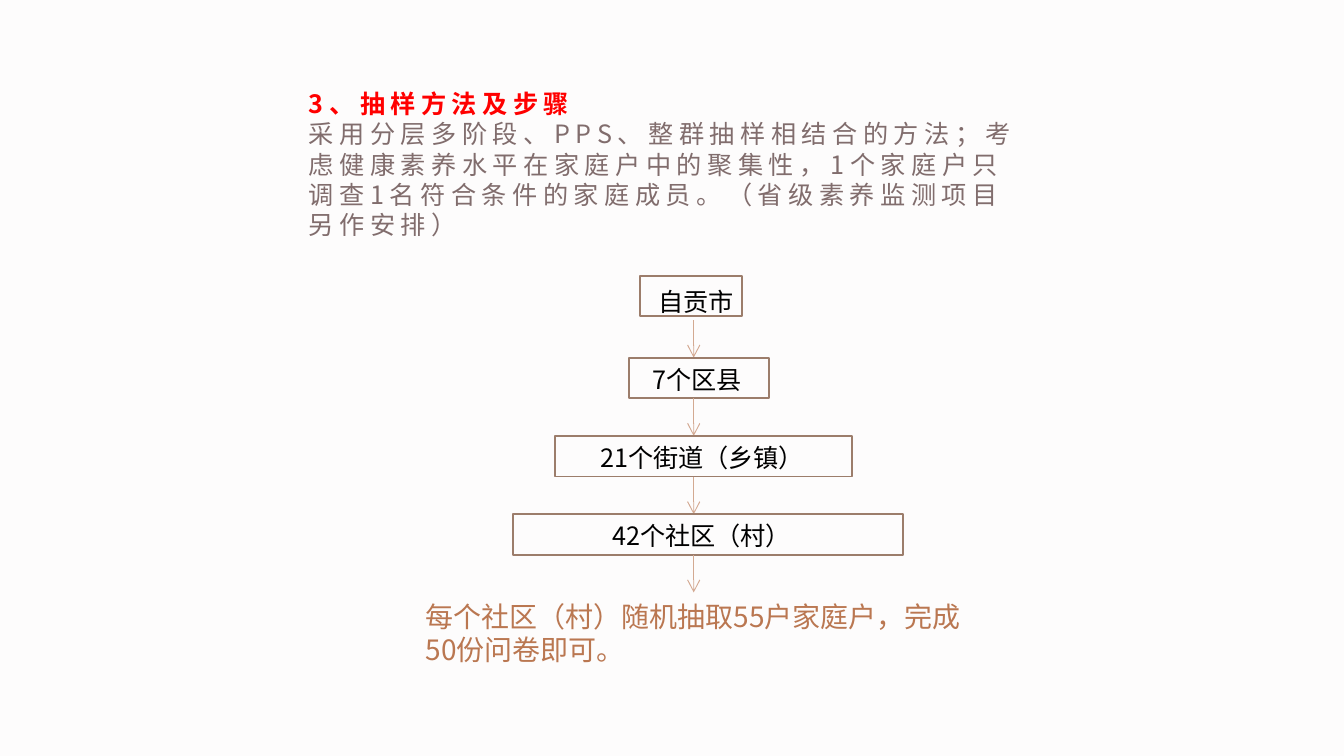
import pptx
import pptx.util
import pptx.dml.color
import pptx.enum.shapes
import pptx.enum.text
import pptx.oxml.ns
from lxml import etree
from pptx.util import Cm, Pt

FONT = "Noto Sans CJK SC"
INK = {"back": "FDFCFC", "head": "FF0000", "body": "816D6D", "note": "BA7751",
       "step": "000000", "edge": "9C7D6B", "arrow": "D3A991"}

HEAD = "3、抽样方法及步骤"
BODY = ("采用分层多阶段、PPS、整群抽样相结合的方法；考虑健康素养水平在家庭户中的聚集性，"
        "1个家庭户只调查1名符合条件的家庭成员。（省级素养监测项目另作安排）")
NOTE = "每个社区（村）随机抽取55户家庭户，完成50份问卷即可。"

# label, box left and width, label left and width, label inset, box lift (cm)
STEPS = [
    ("自贡市", 12.09, 1.93, 12.19, 2.08, 0.25, 0.07),
    ("7个区县", 11.89, 2.64, 12.09, 2.41, 0.25, 0),
    ("21个街道（乡镇）", 10.49, 5.61, 10.59, 5.41, 0.76, 0),
    ("42个社区（村）", 9.7, 7.37, 10.49, 5.41, 1.09, 0),
]
TOP, PITCH, TALL = 5.28, 1.48, 0.77
AXIS, REACH = 13.11, 0.71


def color(name):
    return pptx.dml.color.RGBColor.from_string(INK[name])


def add_text(slide, area, lines, size, inset=0.25, track=0):
    """Add a text box; lines are (text, colour name, bold), track is in points."""
    box = slide.shapes.add_textbox(*map(Cm, area))
    frame = box.text_frame
    frame.word_wrap = True
    frame.auto_size = pptx.enum.text.MSO_AUTO_SIZE.SHAPE_TO_FIT_TEXT
    frame.margin_left = Cm(inset)
    frame.text = "\n".join(line[0] for line in lines)
    for para, (_, ink, bold) in zip(frame.paragraphs, lines):
        run = para.runs[0]
        run.font.size = Pt(size)
        run.font.bold = bold
        run.font.color.rgb = color(ink)
        run.font.name = FONT
        props = run.font._element
        etree.SubElement(props, pptx.oxml.ns.qn("a:ea"), typeface=FONT)
        if track:
            props.set("spc", str(track * 100))


def add_box(slide, area):
    box = slide.shapes.add_shape(
        pptx.enum.shapes.MSO_SHAPE.RECTANGLE, *map(Cm, area))
    box.shadow.inherit = False
    box.fill.background()
    box.line.color.rgb = color("edge")
    box.line.width = Pt(1)


def add_arrow(slide, x, start, end):
    arrow = slide.shapes.add_connector(
        pptx.enum.shapes.MSO_CONNECTOR.STRAIGHT, Cm(x), Cm(start), Cm(x), Cm(end))
    arrow.line.color.rgb = color("arrow")
    arrow.line.width = Pt(0.5)
    qn = pptx.oxml.ns.qn
    etree.SubElement(arrow.line._get_or_add_ln(), qn("a:tailEnd"), type="arrow")
    etree.SubElement(arrow._element.spPr, qn("a:effectLst"))


def main():
    deck = pptx.Presentation()
    deck.slide_width, deck.slide_height = Cm(25.4), Cm(14.29)
    slide = deck.slides.add_slide(deck.slide_layouts[6])
    slide.background.fill.solid()
    slide.background.fill.fore_color.rgb = color("back")

    add_text(slide, (5.59, 1.55, 14.2, 3.15),
             [(HEAD, "head", True), (BODY, "body", False)], 13.5, track=3)
    for row, (label, left, width, start, span, inset, lift) in enumerate(STEPS):
        top = TOP + row * PITCH
        add_box(slide, (left, top - lift, width, TALL))
        add_text(slide, (start, top, span, 0.84),
                 [(label, "step", False)], 13.5, inset)
        add_arrow(slide, AXIS, top + PITCH - REACH, top + PITCH)
    add_text(slide, (7.8, 11.2, 10.87, 1.52), [(NOTE, "note", False)], 15)

    deck.save("out.pptx")


if __name__ == "__main__":
    main()
